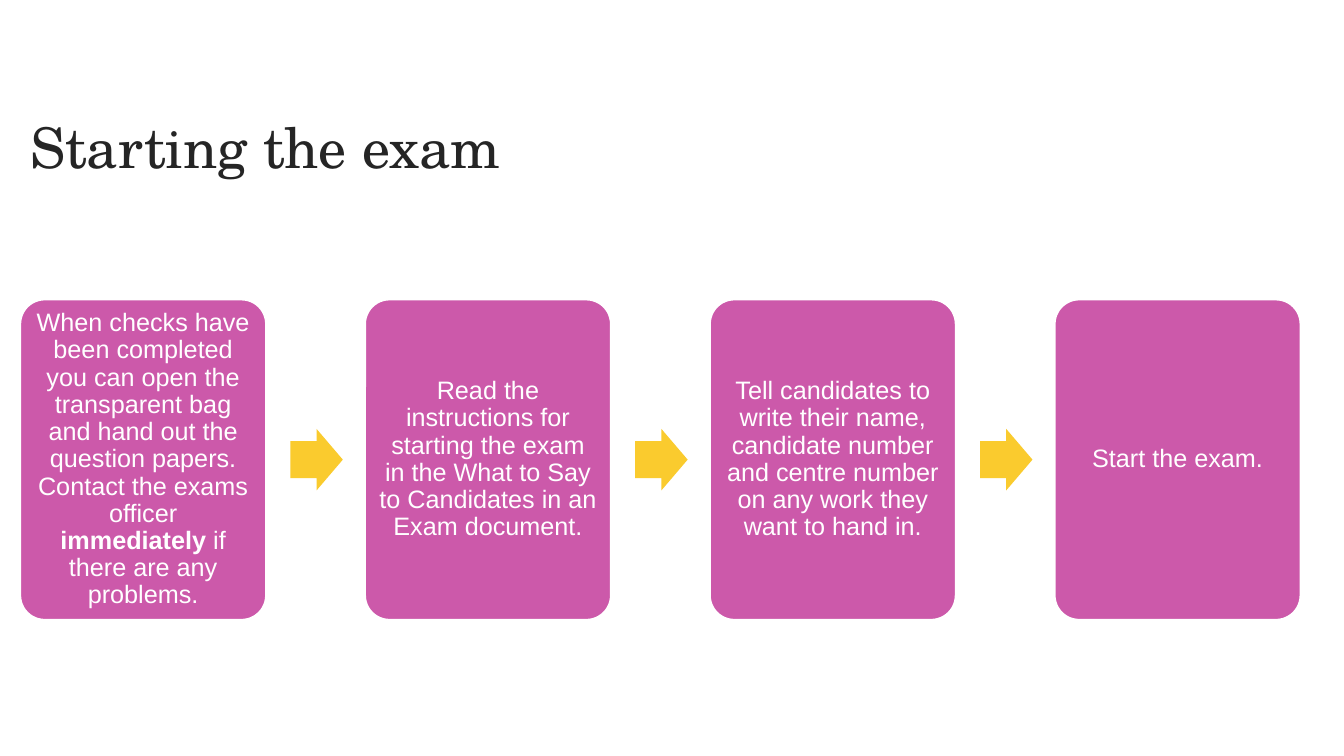
from pptx import Presentation
from pptx.dml.color import RGBColor
from pptx.enum import shapes, text
from pptx.util import Inches, Pt

# Content: each step is a list of (wording, bold) runs
TITLE = "Starting the exam"
STEPS = [
    [("When checks have been completed you can open the transparent bag and hand out "
      "the question papers. Contact the exams officer ", False),
     ("immediately ", True),
     ("if there are any problems.", False)],
    [("Read the instructions for starting the exam in the What to Say to Candidates "
      "in an Exam document.", False)],
    [("Tell candidates to write their name, candidate number and centre number on "
      "any work they want to hand in.", False)],
    [("Start the exam.", False)],
]

THEME = {
    "title_font": "TeX Gyre Schola", "title_size": Pt(40), "title": RGBColor(0x25, 0x25, 0x25),
    "body_font": "Arial", "body_size": Pt(18), "white": RGBColor(0xFF, 0xFF, 0xFF),
    "card": RGBColor(0xCC, 0x59, 0xAA), "arrow": RGBColor(0xFA, 0xCB, 0x2E),
}

# Layout in inches
LEFT, TOP, PITCH = 0.2, 2.97, 3.42
CARD_W, CARD_H = 2.44, 3.18
ARROW_W, ARROW_H, ARROW_GAP = 0.52, 0.61, 0.24


def add_run(p, wording, font, size, color, bold=False):
    r = p.add_run()
    r.text = wording
    r.font.name, r.font.size, r.font.bold = font, size, bold
    r.font.color.rgb = color


def add_block(slide, kind, x, y, w, h, fill, adjustments):
    sp = slide.shapes.add_shape(kind, Inches(x), Inches(y), Inches(w), Inches(h))
    sp.shadow.inherit = False
    sp.fill.solid()
    sp.fill.fore_color.rgb = fill
    sp.line.fill.background()
    for i, value in enumerate(adjustments):
        sp.adjustments[i] = value
    return sp


def add_title(slide):
    box = slide.shapes.add_textbox(Inches(LEFT), Inches(1.1), Inches(12.72), Inches(0.79))
    tf = box.text_frame
    tf.word_wrap = True
    tf.vertical_anchor = text.MSO_ANCHOR.MIDDLE
    p = tf.paragraphs[0]
    p.line_spacing = 0.9
    add_run(p, TITLE, THEME["title_font"], THEME["title_size"], THEME["title"])


def add_card(slide, x, runs):
    sp = add_block(slide, shapes.MSO_SHAPE.ROUNDED_RECTANGLE, x, TOP, CARD_W, CARD_H,
                   THEME["card"], [0.1])
    sp.line.color.rgb = THEME["white"]
    sp.line.width = Pt(1.5)
    tf = sp.text_frame
    tf.word_wrap = True
    tf.vertical_anchor = text.MSO_ANCHOR.MIDDLE
    tf.margin_left = tf.margin_right = tf.margin_top = tf.margin_bottom = Inches(0.07)
    p = tf.paragraphs[0]
    p.alignment = text.PP_ALIGN.CENTER
    p.line_spacing = 0.9
    for wording, bold in runs:
        add_run(p, wording, THEME["body_font"], THEME["body_size"], THEME["white"], bold)


def main():
    prs = Presentation()
    prs.slide_width, prs.slide_height = Inches(13.33), Inches(7.5)
    slide = prs.slides.add_slide(prs.slide_layouts[6])
    add_title(slide)

    # Cards in a row, with an arrow between neighbours
    for i, runs in enumerate(STEPS):
        x = LEFT + i * PITCH
        add_card(slide, x, runs)
        if i < len(STEPS) - 1:
            add_block(slide, shapes.MSO_SHAPE.RIGHT_ARROW, x + CARD_W + ARROW_GAP,
                      TOP + (CARD_H - ARROW_H) / 2, ARROW_W, ARROW_H,
                      THEME["arrow"], [0.6, 0.5])

    prs.save("out.pptx")


if __name__ == "__main__":
    main()
